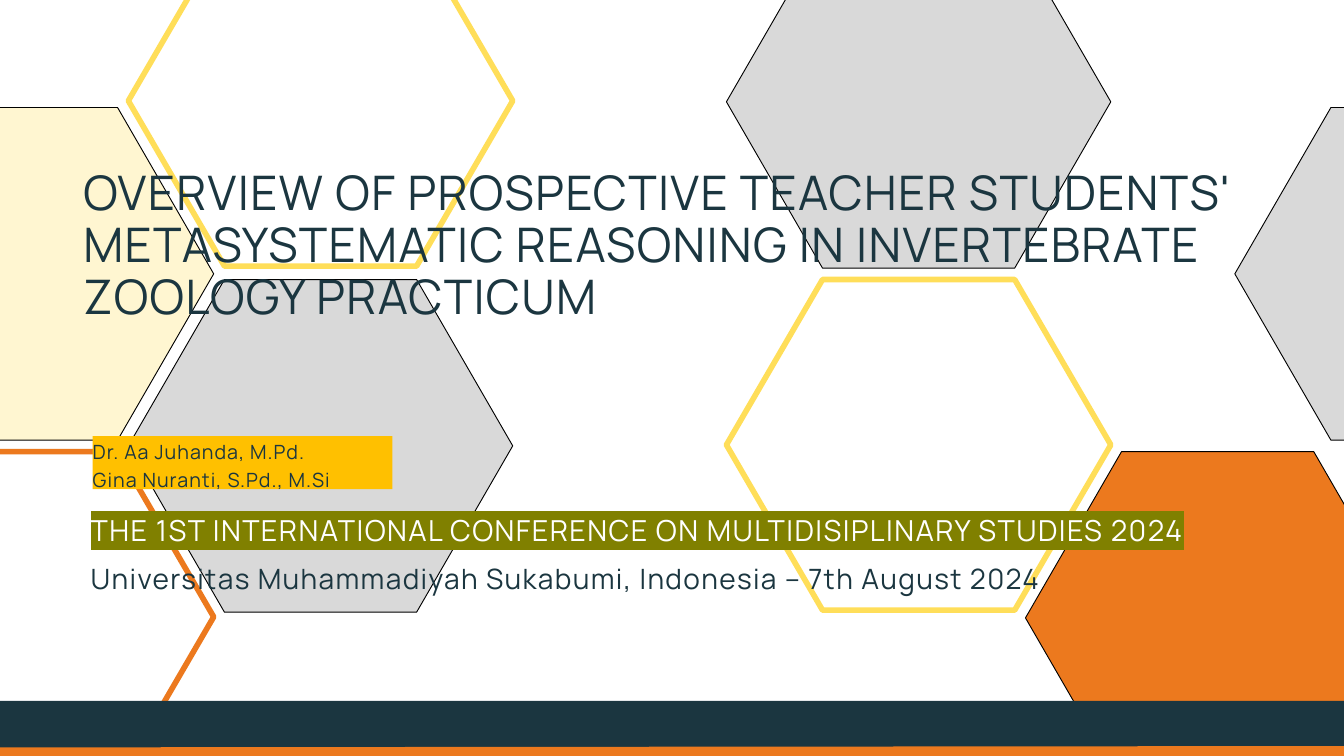
import pptx
import pptx.dml.color
import pptx.enum.shapes
import pptx.enum.text
import pptx.oxml
import pptx.oxml.ns
import pptx.util

RGB = pptx.dml.color.RGBColor
Inches, Pt = pptx.util.Inches, pptx.util.Pt
SHAPE = pptx.enum.shapes.MSO_SHAPE

NAVY = RGB(0x1B, 0x36, 0x40)
ORANGE = RGB(0xEC, 0x79, 0x1E)
YELLOW = RGB(0xFF, 0xDE, 0x59)
CREAM = RGB(0xFF, 0xF6, 0xD1)
GREY = RGB(0xD9, 0xD9, 0xD9)
AMBER = RGB(0xFF, 0xC0, 0x00)
OLIVE = RGB(0x80, 0x80, 0x00)
WHITE = RGB(0xFF, 0xFF, 0xFF)
BLACK = RGB(0, 0, 0)

WIDTH, HEIGHT = 20, 11.25
FONT = "Manrope"

# Honeycomb grid: origin, column and row pitch, cell size (inches)
LEFT, TOP, COLUMN, ROW = -2.54, -0.96, 4.45, 2.56
CELL_WIDTH, FILLED_HEIGHT, OUTLINED_HEIGHT = 5.72, 4.95, 4.92

# Column, row, fill; an outlined cell has a line colour instead
FILLED_CELLS = [(4, 3, ORANGE), (3, 0, GREY), (0, 1, CREAM), (1, 2, GREY), (4.7, 1, GREY)]
OUTLINED_CELLS = [(3, 2, YELLOW), (0, 3, ORANGE), (1, 0, YELLOW)]


def share(box):
    """Turn percentages of the slide into left, top, width, height."""
    return [Inches(side * part / 100) for side, part in zip((WIDTH, HEIGHT) * 2, box)]


def apply_format(target, values):
    for name, value in values.items():
        setattr(target, name, value)


def add_hexagon(page, column, row, fill=None, line=BLACK, weight=1):
    height = FILLED_HEIGHT if fill else OUTLINED_HEIGHT
    cell = page.shapes.add_shape(
        SHAPE.HEXAGON, Inches(LEFT + column * COLUMN), Inches(TOP + row * ROW),
        Inches(CELL_WIDTH), Inches(height))
    cell.adjustments[0] = CELL_WIDTH / 4 / height
    cell.shadow.inherit = False
    if fill:
        cell.fill.solid()
        cell.fill.fore_color.rgb = fill
    else:
        cell.fill.background()
    cell.line.color.rgb = line
    cell.line.width = Pt(weight)


def add_panel(page, box, colour):
    panel = page.shapes.add_shape(SHAPE.RECTANGLE, *share(box))
    panel.shadow.inherit = False
    panel.fill.solid()
    panel.fill.fore_color.rgb = colour
    panel.line.fill.background()
    return panel


def add_footer(page, box):
    """Dark band with an orange rule below it."""
    add_panel(page, box, NAVY)
    start_x, start_y, end_x, end_y = share((0, 99.56, 100, 99.38))
    rule = page.shapes.add_connector(
        pptx.enum.shapes.MSO_CONNECTOR.STRAIGHT, start_x, start_y, end_x, end_y)
    rule.line.color.rgb = ORANGE
    rule.line.width = Pt(11.25)
    rule._element.spPr.append(pptx.oxml.parse_xml(
        f'<a:effectLst {pptx.oxml.ns.nsdecls("a")}/>'))


def write_text(shape, lines, size, leading, tracking, colour=NAVY, highlight=None):
    frame = shape.text_frame
    apply_format(frame, {
        "margin_left": 0, "margin_top": 0, "margin_right": 0, "margin_bottom": 0,
        "word_wrap": True, "auto_size": pptx.enum.text.MSO_AUTO_SIZE.NONE,
        "vertical_anchor": pptx.enum.text.MSO_ANCHOR.TOP})
    for index, line in enumerate(lines):
        para = frame.add_paragraph() if index else frame.paragraphs[0]
        apply_format(para, {"alignment": pptx.enum.text.PP_ALIGN.LEFT,
                            "line_spacing": Pt(leading), "space_before": Pt(0)})
        span = para.add_run()
        span.text = line
        apply_format(span.font, {"name": FONT, "size": Pt(size), "bold": False})
        span.font.color.rgb = colour
        properties = span._r.get_or_add_rPr()
        properties.set("spc", str(round(tracking * 100)))
        if highlight:
            fill = properties.find(pptx.oxml.ns.qn("a:solidFill"))
            fill.addnext(pptx.oxml.parse_xml(
                f'<a:highlight {pptx.oxml.ns.nsdecls("a")}>'
                f'<a:srgbClr val="{highlight}"/></a:highlight>'))


def place_placeholder(page, holder, box):
    """Position a placeholder and bring it in front of the honeycomb."""
    apply_format(holder, dict(zip(("left", "top", "width", "height"), share(box))))
    page.shapes._spTree.append(holder._element)
    return holder


def build_cover(deck):
    page = deck.slides.add_slide(deck.slide_layouts[0])
    title, subtitle = page.placeholders[0], page.placeholders[1]

    # Background honeycomb and footer
    for column, row, colour in OUTLINED_CELLS:
        add_hexagon(page, column, row, line=colour, weight=6)
    for column, row, colour in FILLED_CELLS:
        add_hexagon(page, column, row, fill=colour)
    add_footer(page, (0, 92.71, 100, 6.22))

    # Title
    write_text(place_placeholder(page, title, (6.2, 22.13, 88.75, 28.09)),
               ["OVERVIEW OF PROSPECTIVE TEACHER STUDENTS' METASYSTEMATIC "
                "REASONING IN INVERTEBRATE ZOOLOGY PRACTICUM"], 51, 56.1, 1.5)

    # Conference and venue
    write_text(place_placeholder(page, subtitle, (6.75, 68.18, 88.75, 10.93)),
               ["THE 1ST INTERNATIONAL CONFERENCE ON MULTIDISIPLINARY STUDIES 2024"],
               31, 34.1, 1.6, WHITE, OLIVE)
    venue = page.shapes.add_textbox(*share((6.75, 73.51, 88.75, 5.24)))
    write_text(venue, ["Universitas Muhammadiyah Sukabumi, Indonesia – 7th August 2024"],
               30, 42, 1.5)

    # Authors
    authors = add_panel(page, (6.9, 57.69, 22.3, 7.02), AMBER)
    write_text(authors, ["Dr. Aa Juhanda, M.Pd.", "Gina Nuranti, S.Pd., M.Si"], 21, 29.4, 1.1)


def main():
    deck = pptx.Presentation()
    deck.slide_width, deck.slide_height = Inches(WIDTH), Inches(HEIGHT)
    build_cover(deck)
    deck.save("out.pptx")


if __name__ == "__main__":
    main()
